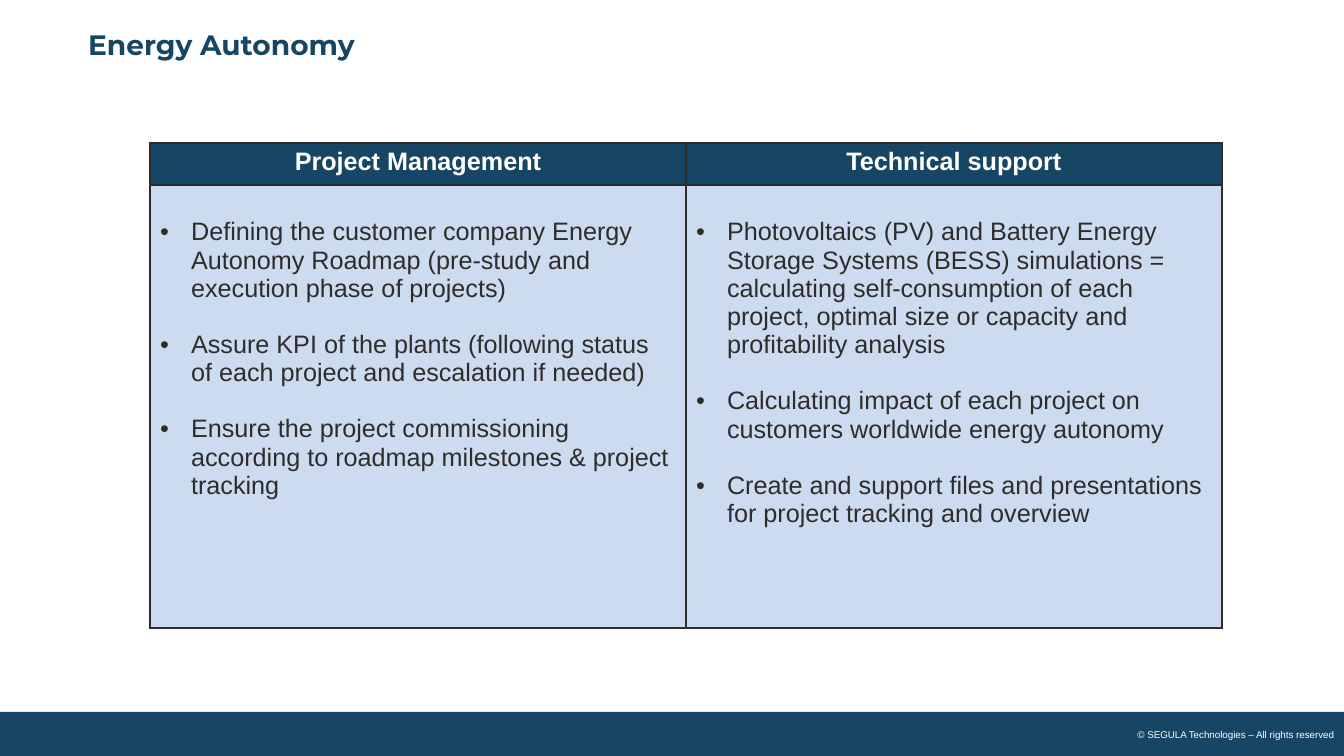
from lxml import etree
from pptx import Presentation
from pptx import util as u
from pptx.dml.color import RGBColor
from pptx.enum import shapes, text
from pptx.oxml.ns import qn

PX = 914400 / 100.8
WIDTH, HEIGHT = 1344, 756
COLORS = {"navy": "174564", "pale": "CCDBEF", "ink": "2E2D2C", "white": "FFFFFF"}
COLUMNS = {
    "Project Management": [
        "Defining the customer company Energy Autonomy Roadmap "
        "(pre-study and execution phase of projects)",
        "Assure KPI of the plants (following status of each project and escalation if needed)",
        "Ensure the project commissioning according to roadmap milestones & project tracking",
    ],
    "Technical support": [
        "Photovoltaics (PV) and Battery Energy Storage Systems (BESS) simulations = "
        "calculating self-consumption of each project, optimal size or capacity "
        "and profitability analysis",
        "Calculating impact of each project on customers worldwide energy autonomy",
        "Create and support files and presentations for project tracking and overview",
    ],
}


def px(n):
    """Turn pixels into EMU."""
    return u.Emu(round(n * PX))


def rgb(name):
    """Look up a colour by name."""
    return RGBColor.from_string(COLORS[name])


def write(p, words, size=18, font="Arial", color="ink", bold=False,
          align=text.PP_ALIGN.LEFT, before=0, bullet=None, indent=31):
    """Write formatted text into a paragraph."""
    if bullet:
        pPr = p._p.get_or_add_pPr()
        pPr.set("marL", str(px(indent)))
        pPr.set("indent", str(-px(indent)))
        etree.SubElement(pPr, qn("a:buFont")).set("typeface", "Arial")
        etree.SubElement(pPr, qn("a:buChar")).set("char", bullet)
    p.alignment = align
    if before:
        p.space_before = u.Pt(before)
    r = p.add_run()
    r.text = words
    r.font.size, r.font.name, r.font.bold = u.Pt(size), font, bold
    r.font.color.rgb = rgb(color)


def add_title(s, x, y, w, h):
    """Place the slide title."""
    sp = s.shapes.title
    sp.left, sp.top, sp.width, sp.height = map(px, (x, y, w, h))
    tf = sp.text_frame
    tf.word_wrap = True
    tf.vertical_anchor = text.MSO_ANCHOR.TOP
    p = tf.paragraphs[0]
    p.line_spacing = 0.9
    write(p, "Energy Autonomy", size=20, font="Montserrat", color="navy", bold=True)


def add_footer(s, x, y, w, h):
    """Draw the bottom bar with its copyright line."""
    sp = s.shapes.add_shape(shapes.MSO_SHAPE.RECTANGLE, *map(px, (x, y, w, h)))
    sp.shadow.inherit = False
    sp.fill.solid()
    sp.fill.fore_color.rgb = rgb("navy")
    sp.line.fill.background()
    note_w, note_h = 249, 20
    note = s.shapes.add_textbox(
        *map(px, (x + w - note_w, y + (h - note_h) // 2 + 1, note_w, note_h)))
    tf = note.text_frame
    tf.word_wrap = True
    tf.vertical_anchor = text.MSO_ANCHOR.MIDDLE
    write(tf.paragraphs[0], "© SEGULA Technologies – All rights reserved",
          size=7, color="white", align=text.PP_ALIGN.RIGHT)


def style_cell(cell, fill):
    """Give a cell its borders and fill."""
    tcPr = cell._tc.get_or_add_tcPr()
    for side in ("lnL", "lnR", "lnT", "lnB"):
        ln = etree.SubElement(tcPr, qn(f"a:{side}"), w=str(u.Pt(1)))
        solid = etree.SubElement(ln, qn("a:solidFill"))
        etree.SubElement(solid, qn("a:srgbClr")).set("val", COLORS["ink"])
    cell.fill.solid()
    cell.fill.fore_color.rgb = rgb(fill)


def add_support_table(s, x, y, w, h, head_h=42):
    """Build the table with one column for each kind of support."""
    table = s.shapes.add_table(2, len(COLUMNS), *map(px, (x, y, w, h))).table
    table.rows[0].height, table.rows[1].height = px(head_h), px(h - head_h)
    for i, (heading, items) in enumerate(COLUMNS.items()):
        table.columns[i].width = px(w // len(COLUMNS))
        head, body = table.cell(0, i), table.cell(1, i)
        style_cell(head, "navy")
        style_cell(body, "pale")
        write(head.text_frame.paragraphs[0], heading, color="white", bold=True,
              align=text.PP_ALIGN.CENTER)
        body.margin_top = px(33)
        tf = body.text_frame
        for n, item in enumerate(items):
            p = tf.add_paragraph() if n else tf.paragraphs[0]
            write(p, item, bullet="•", before=20 if n else 0)


def main():
    """Build and save the slide."""
    prs = Presentation()
    prs.slide_width, prs.slide_height = px(WIDTH), px(HEIGHT)
    s = prs.slides.add_slide(prs.slide_layouts[5])
    add_footer(s, 0, 712, WIDTH, HEIGHT - 712)
    add_title(s, 78, 26, 1246, 61)
    add_support_table(s, 150, 143, 1072, 485)
    prs.save("out.pptx")


if __name__ == "__main__":
    main()
